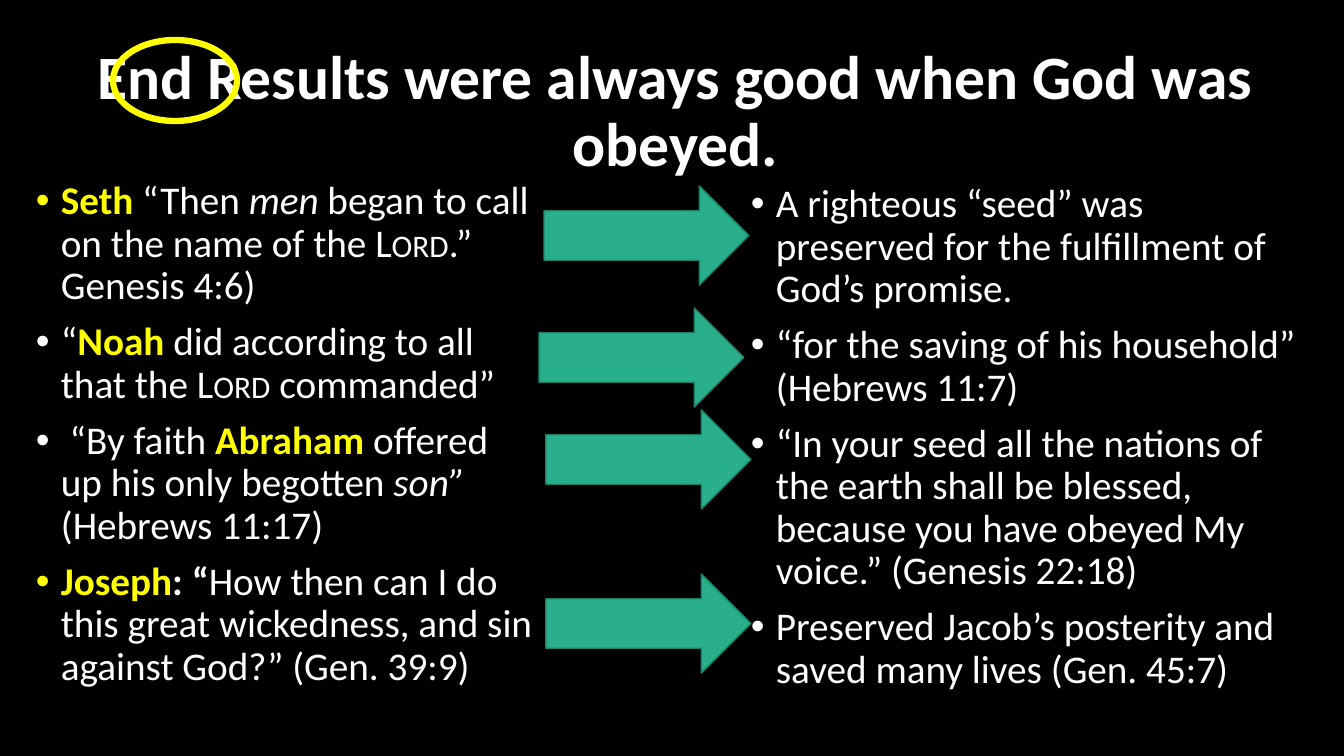
from lxml.etree import SubElement
from pptx import Presentation
from pptx.dml.color import RGBColor
from pptx.enum.shapes import MSO_SHAPE
from pptx.enum.text import MSO_ANCHOR, PP_ALIGN
from pptx.oxml.ns import qn
from pptx.util import Emu, Pt

SCALE = 12192000 / 1344  # EMU per px
FONT = "Calibri"
COLORS = {
    "background": "000000",
    "text": "FFFFFF",
    "highlight": "FFFF00",
    "arrow": "29AF8C",
    "arrow_edge": "1E8168",
}

TITLE = "End Results were always good when God was obeyed."

# Each paragraph is a list of (text, style) spans
EXAMPLES = [
    [("Seth", "name"), (" “Then ", ""), ("men", "italic"),
     (" began to call on the name of the ", ""), ("Lord", "small caps"),
     (".” Genesis 4:6)", "")],
    [("“", ""), ("Noah ", "name"), ("did according to all that the ", ""),
     ("Lord", "small caps"), (" commanded”", "")],
    [(" “By faith ", ""), ("Abraham", "name"),
     (" offered up his only begotten ", ""), ("son” ", "italic"),
     ("(Hebrews 11:17)", "")],
    [("Joseph", "name"), (": “", "bold"),
     ("How then can I do this great wickedness, and sin against God?” (Gen. 39:9)", "")],
]
RESULTS = [
    [("A righteous “seed” was preserved for the fulfillment of God’s promise.", "")],
    [("“for the saving of his household” (Hebrews 11:7)", "")],
    [("“In your seed all the nations of the earth shall be blessed, "
      "because you have obeyed My voice.” (Genesis 22:18)", "")],
    [("Preserved Jacob’s posterity and saved many lives (Gen. 45:7)", "")],
]

ARROW_SIZE = (205, 99)
ARROW_CORNERS = [(544, 186), (539, 308), (546, 410), (546, 574)]


def px(length):
    return Emu(round(length * SCALE))


def color(name):
    return RGBColor.from_string(COLORS[name])


def format_span(span, size, style=""):
    font = span.font
    font.name = FONT
    font.size = Pt(size)
    font.bold = style in ("name", "bold")
    font.italic = style == "italic"
    font.color.rgb = color("highlight" if style == "name" else "text")
    if style == "small caps":
        span._r.get_or_add_rPr().set("cap", "small")


def add_text_frame(page, left, top, width, height):
    box = page.shapes.add_textbox(px(left), px(top), px(width), px(height))
    box.text_frame.word_wrap = True
    return box.text_frame


def add_title(page, text, *bounds):
    frame = add_text_frame(page, *bounds)
    frame.vertical_anchor = MSO_ANCHOR.MIDDLE
    frame.text = text
    para = frame.paragraphs[0]
    para.alignment = PP_ALIGN.CENTER
    para.line_spacing = 0.9
    format_span(para.runs[0], 44, "bold")


def add_bullet(para):
    properties = para._p.get_or_add_pPr()
    properties.set("marL", str(px(25)))
    properties.set("indent", str(-px(25)))
    SubElement(properties, qn("a:buFont"), typeface="Arial")
    SubElement(properties, qn("a:buChar"), char="•")


def add_bullet_list(page, items, *bounds):
    frame = add_text_frame(page, *bounds)
    for index, spans in enumerate(items):
        para = frame.add_paragraph() if index else frame.paragraphs[0]
        para.line_spacing = 0.9
        para.space_before = Pt(10)
        add_bullet(para)
        for text, style in spans:
            span = para.add_run()
            span.text = text
            format_span(span, 28, style)


def add_outlined_shape(page, kind, bounds, line, line_width, fill=None):
    shape = page.shapes.add_shape(kind, *[px(length) for length in bounds])
    shape.shadow.inherit = False
    shape.line.color.rgb = color(line)
    shape.line.width = Pt(line_width)
    if fill:
        shape.fill.solid()
        shape.fill.fore_color.rgb = color(fill)
    else:
        shape.fill.background()


def main():
    deck = Presentation()
    deck.slide_width, deck.slide_height = px(1344), px(756)
    page = deck.slides.add_slide(deck.slide_layouts[6])
    page.background.fill.solid()
    page.background.fill.fore_color.rgb = color("background")

    # Title and the two columns
    add_title(page, TITLE, 26, 40, 1299, 146)
    add_bullet_list(page, EXAMPLES, 26, 176, 516, 550)
    add_bullet_list(page, RESULTS, 741, 179, 572, 558)

    # Ring around the first word of the title
    add_outlined_shape(page, MSO_SHAPE.OVAL, (113, 40, 124, 81), "highlight", 4.5)

    # Arrows from each example to its result
    for corner in ARROW_CORNERS:
        add_outlined_shape(page, MSO_SHAPE.RIGHT_ARROW, corner + ARROW_SIZE,
                           "arrow_edge", 1, "arrow")

    deck.save("out.pptx")


if __name__ == "__main__":
    main()
